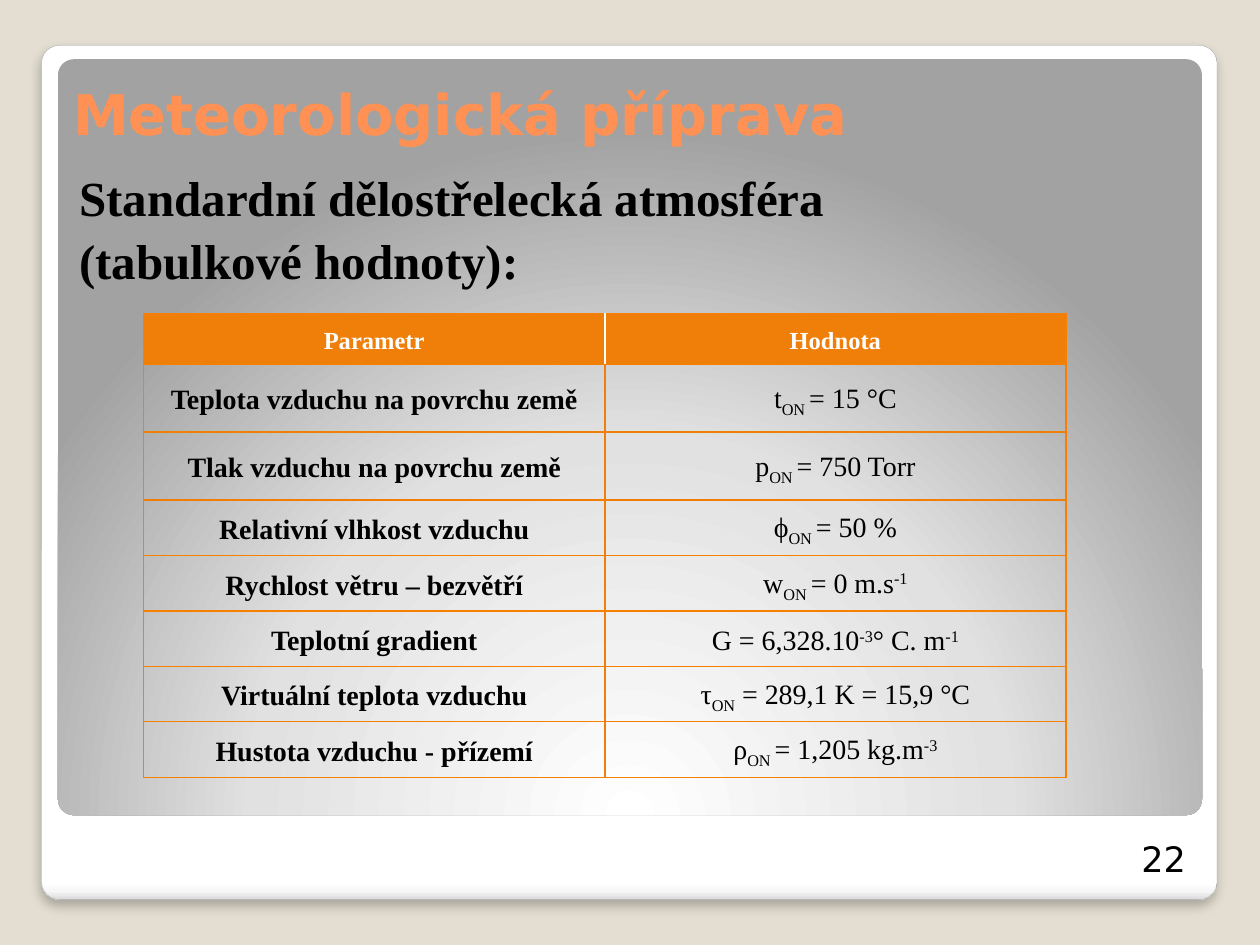
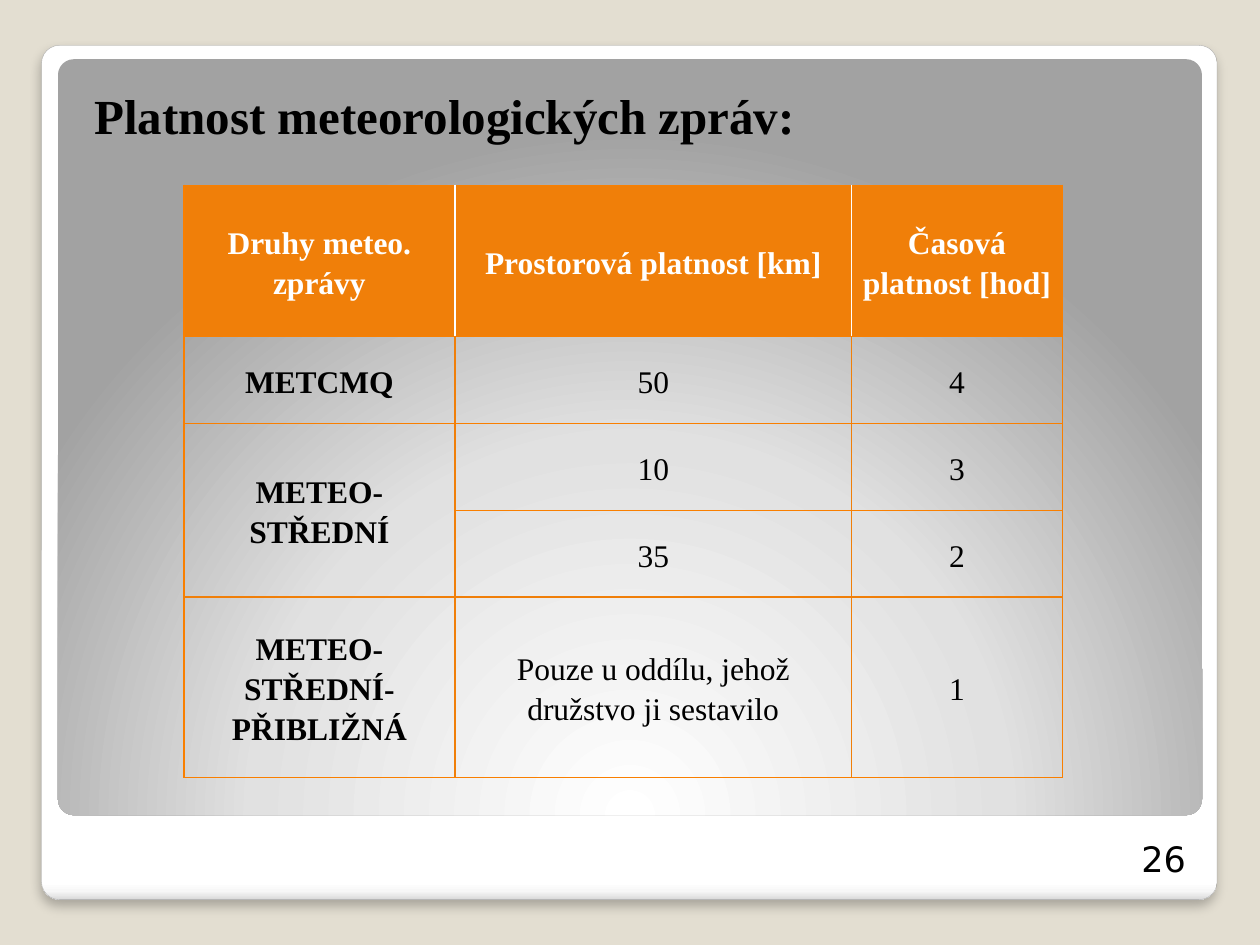
import pptx
import pptx.util
import pptx.dml.color
import pptx.enum.shapes
import pptx.enum.text
import pptx.oxml
import pptx.oxml.ns

Inches, Pt = pptx.util.Inches, pptx.util.Pt
ALIGN, ANCHOR = pptx.enum.text.PP_ALIGN, pptx.enum.text.MSO_ANCHOR
SERIF, SANS = "Times New Roman", "DejaVu Sans"
BLACK, WHITE, ORANGE, BRIGHT_ORANGE = "000000", "FFFFFF", "F07F09", "F97F00"
THIN, HEAVY, HEADER_EDGE = (BRIGHT_ORANGE, 0.75), (ORANGE, 1), (WHITE, 1)
NS = pptx.oxml.ns.nsdecls("a")


def color(hex_value):
    return pptx.dml.color.RGBColor.from_string(hex_value)


def write(paragraph, text, font, size, hex_value, bold=False):
    """Runs are split by |; a leading _ lowers a run and ^ raises it."""
    for part in text.split("|"):
        run = paragraph.add_run()
        run.text = part.lstrip("_^")
        style = {"name": font, "size": Pt(size), "bold": bold}
        for key, value in style.items():
            setattr(run.font, key, value)
        run.font.color.rgb = color(hex_value)
        if part[0] in "_^":
            run.font._element.set("baseline", "-25000" if part[0] == "_" else "30000")


# Shared frame: white card and grey panel with gradient stops in percent
frame = [
    {"at": (0.33, 0.36, 9.33, 6.78),
     "stops": [(0, WHITE), (98, WHITE), (99, "F7F7F7"), (100, "DADADA")],
     "direction": '<a:lin ang="5400000" scaled="0"/>', "card": True},
    {"at": (0.46, 0.47, 9.08, 6),
     "stops": [(0, WHITE), (55, "E1E1E1"), (100, "A2A2A2")],
     "direction": '<a:path path="circle"><a:fillToRect l="50000" t="175000" '
                  'r="50000" b="-75000"/></a:path>', "card": False},
]

# Content: text entries are (place, insets, anchor, lines, font, size, colour, align)
pages = [
    {"number": "22",
     "title": "Meteorologická příprava",
     "heading": ["Standardní dělostřelecká atmosféra", "(tabulkové hodnoty):"],
     "heading_at": (0.43, 1.23, 8.95, 1.36),
     "table_at": (1.14, 2.49), "columns": [3.66, 3.66],
     "heights": [0.4, 0.54, 0.54] + [0.44] * 5,
     "sizes": (14, 16), "heavy_below": [1, 2], "merge": None,
     "rows": [
         ("Parametr", "Hodnota"),
         ("Teplota vzduchu na povrchu země", "t|_ON |= 15 °C"),
         ("Tlak vzduchu na povrchu země", "p|_ON |= 750 Torr"),
         ("Relativní vlhkost vzduchu", "ϕ|_ON |= 50 %"),
         ("Rychlost větru – bezvětří", "w|_ON |= 0 m.s|^-1"),
         ("Teplotní gradient", "G = 6,328.10|^-3|° C. m|^-1"),
         ("Virtuální teplota vzduchu", "τ|_ON| = 289,1 K = 15,9 °C"),
         ("Hustota vzduchu - přízemí", "ρ|_ON |= 1,205 kg.m|^-3"),
     ]},
    {"number": "26",
     "title": None,
     "heading": ["Platnost meteorologických zpráv:"],
     "heading_at": (0.55, 0.58, 8.95, 4.58),
     "table_at": (1.46, 1.47), "columns": [2.15, 3.15, 1.67],
     "heights": [1.2, 0.69, 0.69, 0.69, 1.43],
     "sizes": (18, 18), "heavy_below": [3], "merge": ((2, 0), (3, 0)),
     "rows": [
         ("Druhy meteo. zprávy", "Prostorová platnost [km]", "Časová platnost [hod]"),
         ("METCMQ", "50", "4"),
         ("METEO-STŘEDNÍ", "10", "3"),
         (None, "35", "2"),
         ("METEO-STŘEDNÍ-PŘIBLIŽNÁ", "Pouze u oddílu, jehož družstvo ji sestavilo", "1"),
     ]},
]

presentation = pptx.Presentation()
presentation.slide_width, presentation.slide_height = Inches(10), Inches(7.5)
background = presentation.slide_master.background.fill
background.solid()
background.fore_color.rgb = color("E3DED1")

for page in pages:
    slide = presentation.slides.add_slide(presentation.slide_layouts[6])

    # Card and panel
    for layer in frame:
        panel = slide.shapes.add_shape(
            pptx.enum.shapes.MSO_SHAPE.ROUNDED_RECTANGLE, *map(Inches, layer["at"]))
        panel.adjustments[0] = 0.021
        panel.shadow.inherit = False
        panel.line.fill.background()
        stops = "".join(f'<a:gs pos="{pos * 1000}"><a:srgbClr val="{shade}"/></a:gs>'
                        for pos, shade in layer["stops"])
        properties = panel._element.spPr
        properties.find(pptx.oxml.ns.qn("a:prstGeom")).addnext(pptx.oxml.parse_xml(
            f'<a:gradFill {NS} rotWithShape="1"><a:gsLst>{stops}</a:gsLst>'
            f'{layer["direction"]}</a:gradFill>'))
        if layer["card"]:
            panel.line.color.rgb = color("A4A4A4")
            panel.line.width = Pt(0.16)
            properties.find(pptx.oxml.ns.qn("a:effectLst")).append(pptx.oxml.parse_xml(
                f'<a:outerShdw {NS} blurRad="{Pt(6)}" dist="{Pt(4)}" dir="5400000" '
                'algn="t" rotWithShape="0"><a:srgbClr val="000000">'
                '<a:alpha val="25000"/></a:srgbClr></a:outerShdw>'))

    # Title, heading and page number
    texts = [
        (page["heading_at"], (0.2, 0.1, 0.1, 0.05), ANCHOR.TOP, page["heading"],
         (SERIF, 28, BLACK, True), ALIGN.LEFT),
        ((8.94, 6.58, 0.59, 0.47), (0.1, 0.05, 0.1, 0.05), ANCHOR.MIDDLE,
         [page["number"]], (SANS, 20, BLACK), ALIGN.CENTER),
    ]
    if page["title"]:
        texts.append(((0.43, 0.53, 8.95, 0.7), (0.15, 0.1, 0.1, 0.05), ANCHOR.TOP,
                      [page["title"]], (SANS, 32, "FF9155", True), ALIGN.LEFT))
    for place, insets, anchor, lines, style, align in texts:
        frame_text = slide.shapes.add_textbox(*map(Inches, place)).text_frame
        frame_text.word_wrap = True
        frame_text.vertical_anchor = anchor
        for side, inset in zip(("left", "top", "right", "bottom"), insets):
            setattr(frame_text, f"margin_{side}", Inches(inset))
        for index, line in enumerate(lines):
            paragraph = frame_text.add_paragraph() if index else frame_text.paragraphs[0]
            paragraph.alignment = align
            if lines is page["heading"]:
                paragraph.space_before = Pt(2.5)
                paragraph._p.get_or_add_pPr().set("marL", str(Inches(0.29)))
                paragraph._p.get_or_add_pPr().set("indent", str(-Inches(0.29)))
            write(paragraph, line, *style)

    # Table of values
    rows, columns = page["rows"], page["columns"]
    values = slide.shapes.add_table(
        len(rows), len(columns), *map(Inches, page["table_at"]),
        Inches(sum(columns)), Inches(sum(page["heights"]))).table
    values.horz_banding = False
    for column, width in zip(values.columns, columns):
        column.width = Inches(width)
    for row, height in zip(values.rows, page["heights"]):
        row.height = Inches(height)
    if page["merge"]:
        first, last = page["merge"]
        values.cell(*first).merge(values.cell(*last))

    for r, entries in enumerate(rows):
        for c, entry in enumerate(entries):
            cell = values.cell(r, c)
            if cell.is_spanned:
                continue
            header = r == 0
            bottom = r + cell.span_height - 1
            inner = HEADER_EDGE if header else HEAVY
            edges = {
                "L": inner if c else THIN,
                "R": inner if c < len(columns) - 1 else THIN,
                "T": HEAVY if r - 1 in page["heavy_below"] else THIN,
                "B": HEAVY if bottom in page["heavy_below"] else THIN,
            }
            for side, (shade, weight) in edges.items():
                cell._tc.get_or_add_tcPr().append(pptx.oxml.parse_xml(
                    f'<a:ln{side} {NS} w="{Pt(weight)}"><a:solidFill>'
                    f'<a:srgbClr val="{shade}"/></a:solidFill></a:ln{side}>'))
            if header:
                cell.fill.solid()
                cell.fill.fore_color.rgb = color(ORANGE)
            else:
                cell.fill.background()
            layout = {"vertical_anchor": ANCHOR.MIDDLE, "margin_top": 0, "margin_bottom": 0,
                      "margin_left": Inches(0.07), "margin_right": Inches(0.07)}
            for key, value in layout.items():
                setattr(cell, key, value)
            paragraph = cell.text_frame.paragraphs[0]
            paragraph.alignment = ALIGN.CENTER
            paragraph.line_spacing = 1.15
            write(paragraph, entry, SERIF, page["sizes"][0 if header else 1],
                  WHITE if header else BLACK, header or c == 0)

presentation.save("out.pptx")
